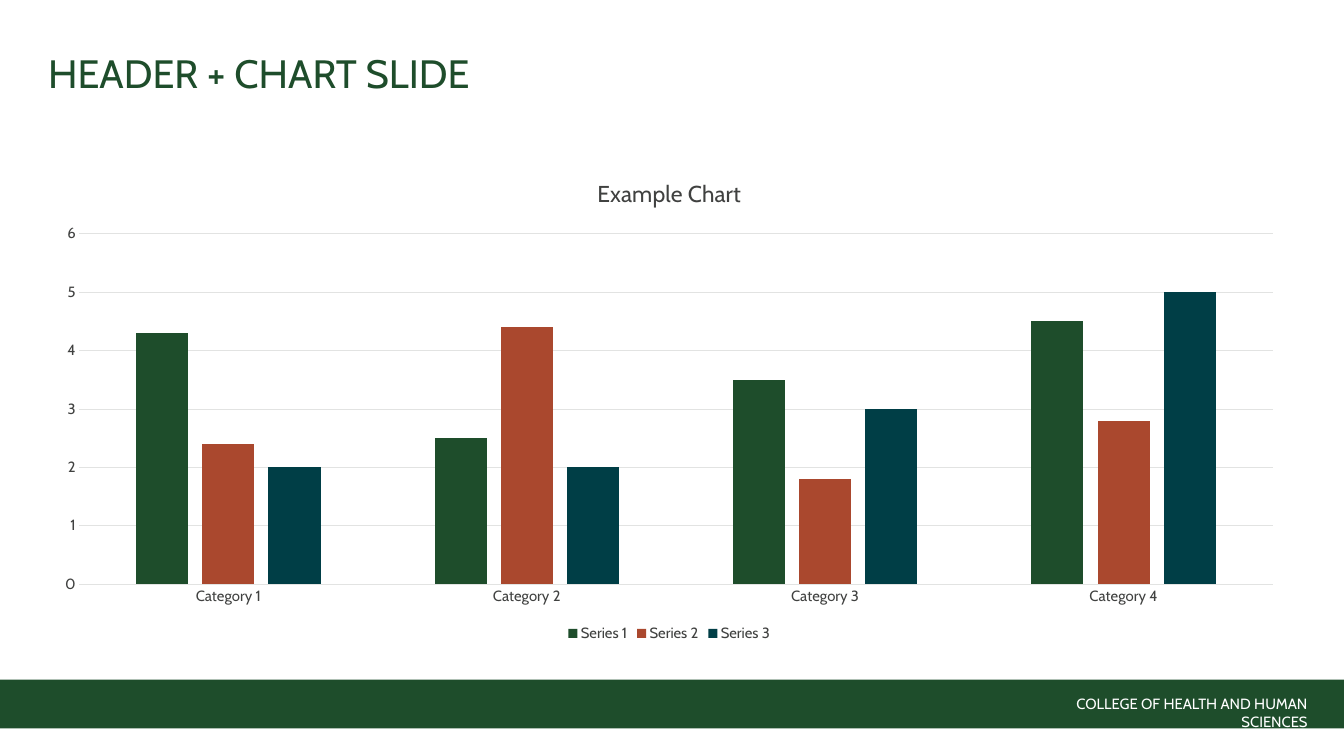
from lxml.etree import SubElement
from pptx import Presentation
from pptx.chart.data import CategoryChartData
from pptx.dml.color import RGBColor
from pptx.enum.chart import XL_CHART_TYPE, XL_LEGEND_POSITION, XL_TICK_MARK
from pptx.enum.shapes import MSO_SHAPE
from pptx.enum.text import MSO_ANCHOR, PP_ALIGN
from pptx.oxml.ns import qn
from pptx.util import Pt

PX = 9144  # EMU per pixel, at 100 pixels to the inch
GREEN, RUST, TEAL = "1E4D2B", "AA482E", "003E46"
WHITE, TEXT, GRID = "FFFFFF", "404140", "E2E3E2"


def px(*lengths):
    """Turn pixel lengths into EMU."""
    return [length * PX for length in lengths]


def set_font(font, size, color):
    font.name = "Cabin"
    font.size = Pt(size)
    font.bold = False
    font.color.rgb = RGBColor.from_string(color)


deck = Presentation()
deck.slide_width, deck.slide_height = px(1511, 850)
page = deck.slides.add_slide(deck.slide_layouts[5])

# Footer band
band = page.shapes.add_shape(MSO_SHAPE.RECTANGLE, *px(0, 764, 1511, 55))
band.shadow.inherit = False
band.fill.solid()
band.fill.fore_color.rgb = RGBColor.from_string(GREEN)
band.line.fill.background()

college = page.shapes.add_textbox(*px(1139, 776, 341, 30))
college.text_frame.word_wrap = True
para = college.text_frame.paragraphs[0]
para.text = "COLLEGE OF HEALTH AND HUMAN SCIENCES"
para.alignment = PP_ALIGN.RIGHT
set_font(para.font, 12, WHITE)

# Title
title = page.shapes.title
title.left, title.top, title.width, title.height = px(48, 49, 1415, 103)
frame = title.text_frame
frame.margin_left, frame.margin_top, frame.margin_right, frame.margin_bottom = px(6, 6, 6, 6)
frame.vertical_anchor = MSO_ANCHOR.TOP
para = frame.paragraphs[0]
para.text = "HEADER + CHART SLIDE"
para.alignment = PP_ALIGN.LEFT
set_font(para.font, 32, GREEN)

# Chart
data = CategoryChartData()
data.categories = [f"Category {number}" for number in range(1, 5)]
data.add_series("Series 1", (4.3, 2.5, 3.5, 4.5))
data.add_series("Series 2", (2.4, 4.4, 1.8, 2.8))
data.add_series("Series 3", (2, 2, 3, 5))
chart = page.shapes.add_chart(
    XL_CHART_TYPE.COLUMN_CLUSTERED, *px(45, 179, 1415, 547), data
).chart
set_font(chart.font, 10, TEXT)

chart.has_title = True
para = chart.chart_title.text_frame.paragraphs[0]
para.text = "Example Chart"
set_font(para.font, 18.6, TEXT)

chart.has_legend = True
chart.legend.position = XL_LEGEND_POSITION.BOTTOM
chart.legend.include_in_layout = False
set_font(chart.legend.font, 12, TEXT)

plot = chart.plots[0]
plot.gap_width = 219
plot.overlap = -27
plot.vary_by_categories = False
for series, color in zip(plot.series, (GREEN, RUST, TEAL)):
    series.format.fill.solid()
    series.format.fill.fore_color.rgb = RGBColor.from_string(color)

for axis in (chart.category_axis, chart.value_axis):
    axis.major_tick_mark = axis.minor_tick_mark = XL_TICK_MARK.NONE
    set_font(axis.tick_labels.font, 12, TEXT)
values = chart.value_axis
values.minimum_scale, values.maximum_scale, values.major_unit = 0, 6, 1
values.format.line.fill.background()
for line in (chart.category_axis.format.line, values.major_gridlines.format.line):
    line.width = Pt(0.75)
    line.color.rgb = RGBColor.from_string(GRID)

# Fixed inner plot area, as shares of the chart frame
plot_area = chart.element.find(".//" + qn("c:plotArea"))
layout = plot_area.find(qn("c:layout"))
if layout is None:
    layout = SubElement(plot_area, qn("c:layout"))
    plot_area.insert(0, layout)
manual = SubElement(layout, qn("c:manualLayout"))
for tag, value in (
    ("layoutTarget", "inner"), ("xMode", "edge"), ("yMode", "edge"),
    ("x", 44 / 1415), ("y", 84 / 547), ("w", 1342 / 1415), ("h", 394 / 547),
):
    SubElement(manual, qn(f"c:{tag}")).set("val", str(value))

deck.save("out.pptx")
